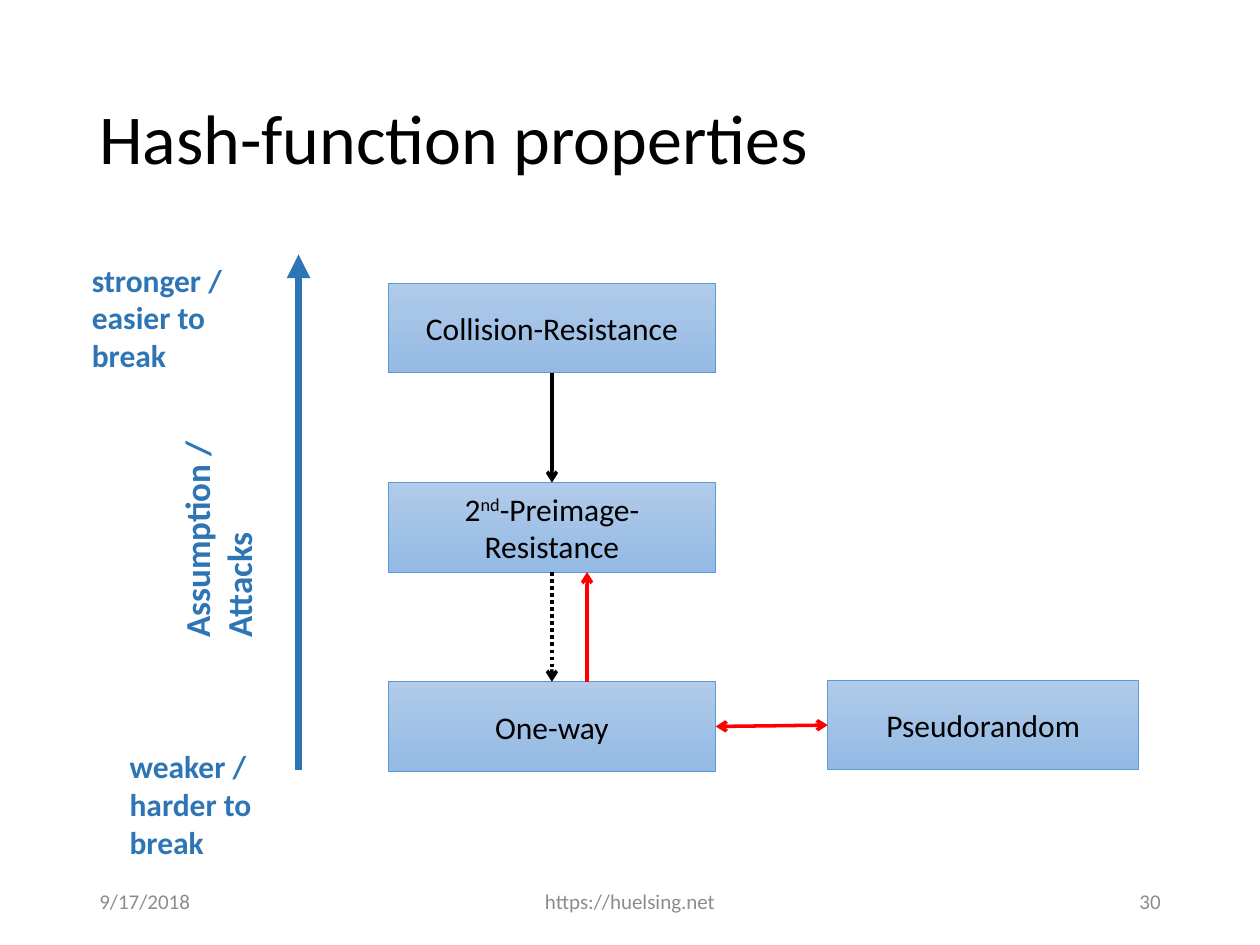
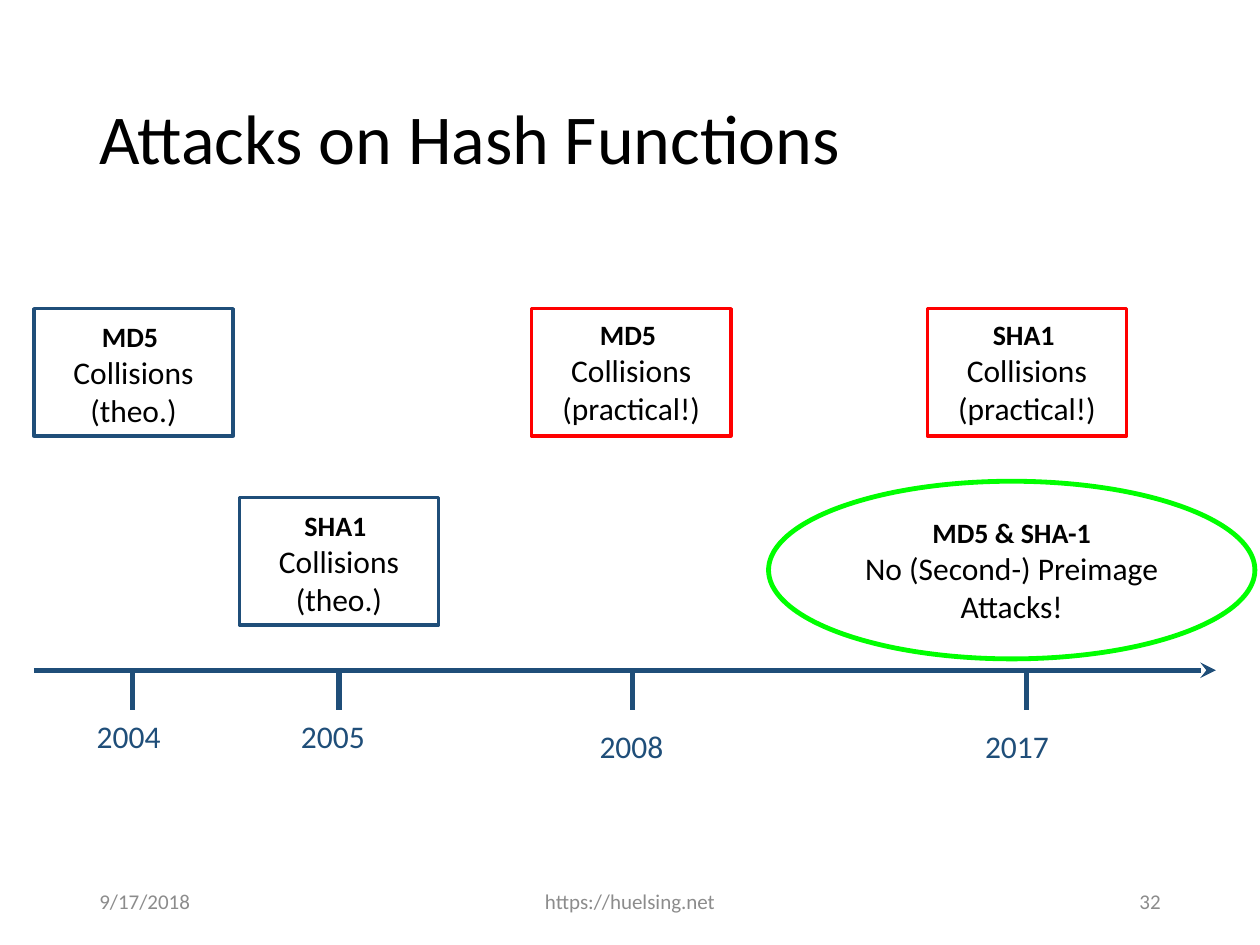
from lxml import etree
from pptx import Presentation
from pptx.dml.color import RGBColor
from pptx.enum.dml import MSO_LINE
from pptx.enum.shapes import MSO_CONNECTOR, MSO_SHAPE
from pptx.enum.text import MSO_ANCHOR, PP_ALIGN
from pptx.oxml.ns import qn
from pptx.util import Pt

LEFT, CENTER, RIGHT = PP_ALIGN.LEFT, PP_ALIGN.CENTER, PP_ALIGN.RIGHT
TOP, MIDDLE = MSO_ANCHOR.TOP, MSO_ANCHOR.MIDDLE
RECTANGLE, OVAL = MSO_SHAPE.RECTANGLE, MSO_SHAPE.OVAL
STRAIGHT, DOTTED = MSO_CONNECTOR.STRAIGHT, MSO_LINE.ROUND_DOT
SIDE_TOP, SIDE_LEFT, SIDE_BOTTOM, SIDE_RIGHT = range(4)

FONT = "Calibri"
COLORS = {
    "text": "000000", "footer": "8C8C8C", "scale": "2E75B6", "timeline": "1F4E79",
    "practical": "FF0000", "safe": "00FF00", "edge": "5B9BD5",
    "box_top": "B1CBE9", "box_bottom": "93B9E4",
}

# ---- Shared content: text, left, width, alignment
DATE = ("9/17/2018", 49.7, 162, LEFT)
SITE = ("https://huelsing.net", 238.3, 243.4, CENTER)
NUMBER_PLACE = (508.3, 162, RIGHT)

# ---- Content of the properties slide; a paragraph is a list of (text, format) spans
PROPERTIES = [
    [("Collision-Resistance", {})],
    [("2", {}), ("nd", {"raised": True}), ("-Preimage-Resistance", {})],
    [("One-way", {})],
]
PSEUDORANDOM = [("Pseudorandom", {})]
SCALE_LABELS = [  # paragraphs, left, top, width, height, size, rotation
    (["Assumption / Attacks"], 57.6, 277.2, 133.2, 55.4, 20, 270),
    (["stronger / easier to break"], 45.4, 145.4, 102.2, 72.7, 18, 0),
    (["weaker /", "harder to break"], 67, 423.4, 105.8, 72.7, 18, 0),
]

# ---- Content of the attacks slide
YEARS = [  # year, tick, label left, label top
    ("2004", 75.6, 48.2, 406.1),
    ("2005", 193.7, 164.9, 406.1),
    ("2008", 361.4, 335.5, 411.8),
    ("2017", 586.8, 555.8, 411.8),
]
ATTACKS = [  # hash, kind, size of the space after the hash, left, top, colour
    ("MD5", "(theo.)", 18, 19.4, 176.4, "timeline"),
    ("SHA1", "(theo.)", 18, 136.8, 284.4, "timeline"),
    ("MD5", "(practical!)", 16, 303.8, 176.4, "practical"),
    ("SHA1", "(practical!)", 16, 529.9, 176.4, "practical"),
]
HEADING = {"size": 16, "bold": True}
STILL_SAFE = [
    [("MD5 & SHA-1", HEADING)],
    [("No (Second-) Preimage Attacks!", {})],
]


def color(name):
    return RGBColor.from_string(COLORS[name])


def write(shape, paragraphs, size=18, ink="text", align=LEFT, anchor=TOP, bold=False):
    """Fill a shape with paragraphs, each a string or a list of (text, format) spans."""
    frame = shape.text_frame
    frame.word_wrap = True
    frame.vertical_anchor = anchor
    for index, spans in enumerate(paragraphs):
        para = frame.add_paragraph() if index else frame.paragraphs[0]
        para.alignment = align
        for text, style in [(spans, {})] if isinstance(spans, str) else spans:
            span = para.add_run()
            span.text = text
            span.font.name = FONT
            span.font.size = Pt(style.get("size", size))
            span.font.bold = style.get("bold", bold)
            span.font.color.rgb = color(ink)
            if style.get("raised"):
                span.font._element.set("baseline", "30000")


def add_text(page, paragraphs, left, top, width, height, **style):
    box = page.shapes.add_textbox(Pt(left), Pt(top), Pt(width), Pt(height))
    write(box, paragraphs, **style)
    return box


def add_box(page, paragraphs, left, top, width, height, edge, weight, kind=RECTANGLE):
    box = page.shapes.add_shape(kind, Pt(left), Pt(top), Pt(width), Pt(height))
    box.shadow.inherit = False
    box.fill.background()
    box.line.color.rgb = color(edge)
    box.line.width = Pt(weight)
    write(box, paragraphs, align=CENTER, anchor=MIDDLE)
    return box


def add_property(page, spans, left, top, width):
    box = add_box(page, [spans], left, top, width, BOX_HEIGHT, "edge", 0.5)
    box.fill.gradient()
    box.fill.gradient_angle = 270
    for stop, name in zip(box.fill.gradient_stops, ("box_top", "box_bottom")):
        stop.color.rgb = color(name)
    return box


def add_line(page, ink, weight, points=(0, 0, 0, 0), head=None, tail=None, dash=None):
    line = page.shapes.add_connector(STRAIGHT, *map(Pt, points))
    line.line.color.rgb = color(ink)
    line.line.width = Pt(weight)
    if dash:
        line.line.dash_style = dash
    outline = line.line._get_or_add_ln()
    for tag, arrow in (("a:headEnd", head), ("a:tailEnd", tail)):
        if arrow:
            etree.SubElement(outline, qn(tag), type=arrow)
    etree.SubElement(line._element.spPr, qn("a:effectLst"))
    return line


def join(line, start, start_side, end, end_side):
    line.begin_connect(start, start_side)
    line.end_connect(end, end_side)


def add_page(deck, title, number):
    page = deck.slides.add_slide(deck.slide_layouts[6])
    heading = add_text(page, [title], 49.7, 28.8, 620.6, 104.4, size=40, anchor=MIDDLE)
    heading.text_frame.paragraphs[0].line_spacing = 0.9
    for text, left, width, align in (DATE, SITE, (number, *NUMBER_PLACE)):
        add_text(page, [text], left, 500.4, width, 28.8,
                 size=12, ink="footer", align=align, anchor=MIDDLE)
    return page


# ---- Layout of the two diagrams
BOX_LEFT, BOX_TOP, BOX_WIDTH, BOX_HEIGHT, BOX_STEP = 221.8, 162, 187.2, 51.1, 113.8
RETURN_X = 335.5
SCALE_X, SCALE_TOP, SCALE_BOTTOM = 170.6, 145.4, 439.9
AXIS_Y, TICK_LENGTH = 383, 23


def build_properties(deck):
    page = add_page(deck, "Hash-function properties", "30")
    tops = [BOX_TOP + row * BOX_STEP for row in range(len(PROPERTIES))]
    collision, second, one_way = [
        add_property(page, spans, BOX_LEFT, top, BOX_WIDTH)
        for spans, top in zip(PROPERTIES, tops)]
    pseudorandom = add_property(page, PSEUDORANDOM, 473, 388.8, 177.8)

    # Implications between the properties
    join(add_line(page, "text", 2, tail="arrow"),
         collision, SIDE_BOTTOM, second, SIDE_TOP)
    join(add_line(page, "text", 2, tail="arrow", dash=DOTTED),
         second, SIDE_BOTTOM, one_way, SIDE_TOP)
    add_line(page, "practical", 2, (RETURN_X, tops[2], RETURN_X, tops[1] + BOX_HEIGHT),
             tail="arrow")
    join(add_line(page, "practical", 2, head="arrow", tail="arrow"),
         one_way, SIDE_RIGHT, pseudorandom, SIDE_LEFT)

    # Strength scale
    add_line(page, "scale", 4.5, (SCALE_X, SCALE_BOTTOM, SCALE_X, SCALE_TOP),
             tail="triangle")
    for paragraphs, left, top, width, height, size, rotation in SCALE_LABELS:
        label = add_text(page, paragraphs, left, top, width, height,
                         size=size, ink="scale", bold=True)
        label.rotation = rotation


def build_attacks(deck):
    page = add_page(deck, "Attacks on Hash Functions", "32")

    # Timeline
    add_line(page, "timeline", 3, (19.4, AXIS_Y, 694.8, AXIS_Y), tail="stealth")
    for year, tick, left, top in YEARS:
        add_line(page, "timeline", 3, (tick, AXIS_Y, tick, AXIS_Y + TICK_LENGTH))
        add_text(page, [year], left, top, 65.5, 28.8, ink="timeline")

    # Attacks found, and what still holds
    for name, kind, space, left, top, edge in ATTACKS:
        heading = [(name, HEADING), (" ", {"size": space})]
        add_box(page, [heading, "Collisions", kind], left, top, 113.8, 72.7, edge, 2)
    add_box(page, STILL_SAFE, 439.2, 275, 277.9, 101.5, "safe", 2.75, OVAL)


def main():
    deck = Presentation()
    deck.slide_width, deck.slide_height = Pt(720), Pt(540)
    build_properties(deck)
    build_attacks(deck)
    deck.save("out.pptx")


if __name__ == "__main__":
    main()
